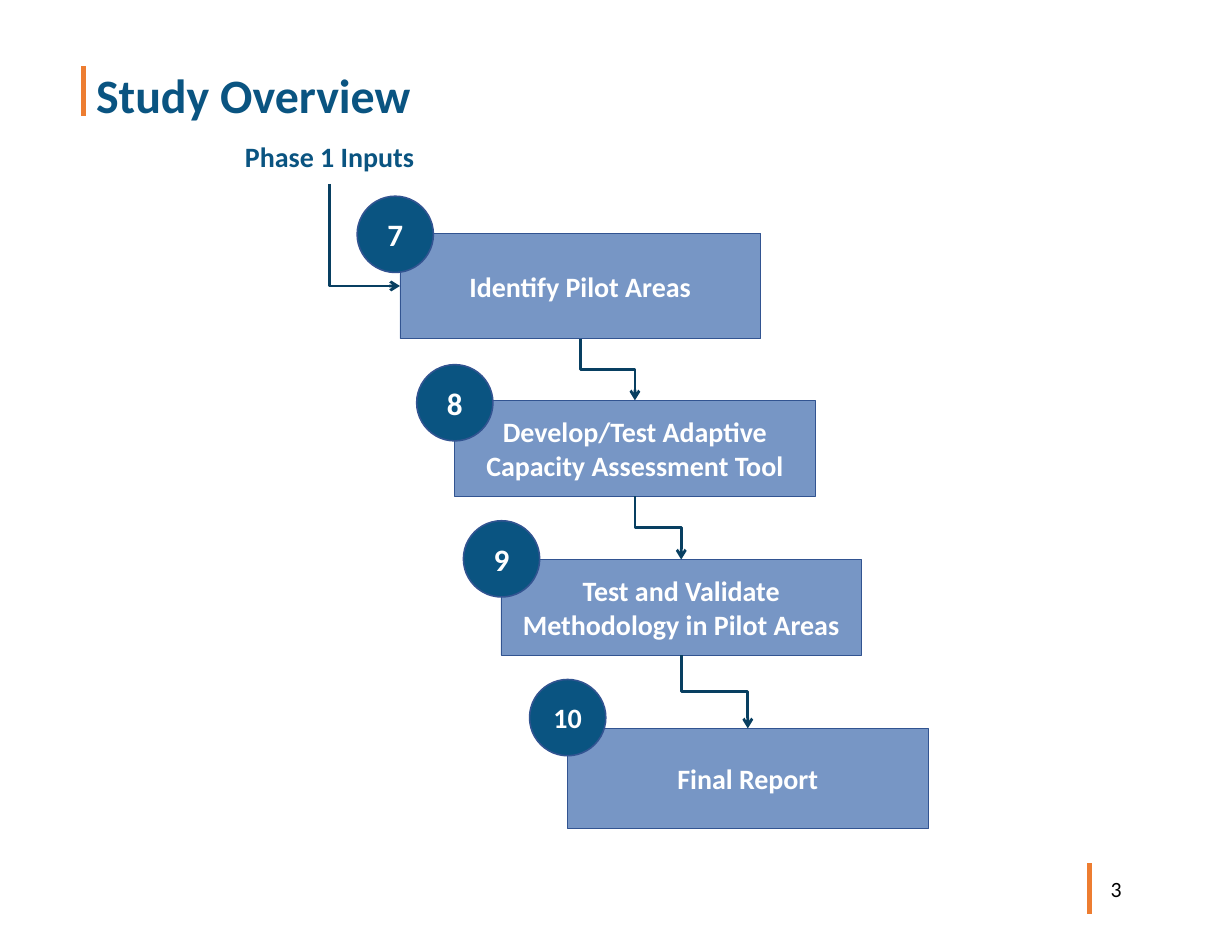
"""Build the Study Overview slide: a staircase of numbered study steps."""
from dataclasses import dataclass
from itertools import pairwise

from lxml.etree import SubElement
from pptx import Presentation
from pptx.dml.color import RGBColor
from pptx.enum.shapes import MSO_CONNECTOR as Connector, MSO_SHAPE as Preset
from pptx.enum.text import MSO_ANCHOR as Anchor, PP_ALIGN as Align
from pptx.oxml.ns import qn
from pptx.shapes.autoshape import Shape
from pptx.shapes.connector import Connector as ConnectorShape
from pptx.slide import Slide
from pptx.util import Cm, Pt

COLORS = {
    "accent": "ED7D31",
    "navy": "0A5481",
    "arrow": "083F61",
    "box": "7796C5",
    "outline": "325491",
    "white": "FFFFFF",
    "black": "000000",
}
FONT = "Calibri"
BOX_WIDTH = 8.18
BADGE_SIZE = 1.73
BAR_HEIGHT = 1.14
BOTTOM, LEFT, TOP = 2, 1, 0


@dataclass(frozen=True)
class Step:
    number: int
    label: str
    left: float
    top: float
    height: float
    badge_left: float
    badge_top: float
    badge_font: float = 20


STEPS = [
    Step(7, "Identify Pilot Areas", 9.07, 5.29, 2.39, 8.1, 4.45),
    Step(8, "Develop/Test Adaptive\vCapacity Assessment Tool", 10.31, 9.08, 2.17, 9.45, 8.27),
    Step(9, "Test and Validate Methodology in Pilot Areas", 11.36, 12.69, 2.17, 10.51, 11.81),
    Step(10, "Final Report", 12.87, 16.52, 2.27, 12.01, 15.41, 18),
]


def color(name: str) -> RGBColor:
    """Return the named palette colour."""
    return RGBColor.from_string(COLORS[name])


def write(shape: Shape, text: str, size: float, font_color: str, bold: bool = True,
          align: Align = Align.CENTER, anchor: Anchor = Anchor.MIDDLE) -> None:
    """Fill a shape with one formatted paragraph."""
    frame = shape.text_frame
    frame.word_wrap = True
    frame.vertical_anchor = anchor
    paragraph = frame.paragraphs[0]
    paragraph.text = text
    paragraph.alignment = align
    for run in paragraph.runs:
        run.font.name = FONT
        run.font.size = Pt(size)
        run.font.bold = bold
        run.font.color.rgb = color(font_color)


def narrow_margins(shape: Shape) -> None:
    """Give a shape the small side margins of the diagram."""
    shape.text_frame.margin_left = shape.text_frame.margin_right = Cm(0.1)


def add_text(slide: Slide, left: float, top: float, width: float, height: float) -> Shape:
    """Add an empty text box measured in centimetres."""
    return slide.shapes.add_textbox(Cm(left), Cm(top), Cm(width), Cm(height))


def add_filled(slide: Slide, preset: Preset, left: float, top: float, width: float,
               height: float, fill: str, line_width: float) -> Shape:
    """Add a flat outlined shape."""
    shape = slide.shapes.add_shape(preset, Cm(left), Cm(top), Cm(width), Cm(height))
    shape.shadow.inherit = False
    shape.fill.solid()
    shape.fill.fore_color.rgb = color(fill)
    shape.line.color.rgb = color("outline")
    shape.line.width = Pt(line_width)
    return shape


def style_line(connector: ConnectorShape, line_color: str, width: float) -> None:
    """Colour a connector and remove its shadow."""
    connector.line.color.rgb = color(line_color)
    connector.line.width = Pt(width)
    SubElement(connector.element.spPr, qn("a:effectLst"))


def add_bar(slide: Slide, left: float, top: float) -> None:
    """Add a vertical accent bar."""
    bar = slide.shapes.add_connector(
        Connector.STRAIGHT, Cm(left), Cm(top), Cm(left), Cm(top + BAR_HEIGHT))
    style_line(bar, "accent", 3)


def add_arrow(slide: Slide, source: Shape, target: Shape, side: int) -> None:
    """Add an elbow arrow that leaves the source downwards and meets a target side."""
    start_x, start_y = source.left + source.width // 2, source.top + source.height
    if side == TOP:
        end_x, end_y = target.left + target.width // 2, target.top
    else:
        end_x, end_y = target.left, target.top + target.height // 2
    arrow = slide.shapes.add_connector(Connector.ELBOW, start_x, start_y, end_x, end_y)
    arrow.begin_connect(source, BOTTOM)
    arrow.end_connect(target, side)
    arrow.width, arrow.height = end_y - start_y, end_x - start_x
    arrow.left = (start_x + end_x - arrow.width) // 2
    arrow.top = (start_y + end_y - arrow.height) // 2
    properties = arrow.element.spPr
    transform = properties.find(qn("a:xfrm"))
    transform.set("rot", "16200000")
    transform.set("flipH", "1")
    if side == LEFT:
        properties.find(qn("a:prstGeom")).set("prst", "bentConnector2")
    style_line(arrow, "arrow", 1.75)
    SubElement(properties.find(qn("a:ln")), qn("a:tailEnd"), type="arrow")


def add_box(slide: Slide, step: Step) -> Shape:
    """Add the labelled rectangle of a step."""
    box = add_filled(slide, Preset.RECTANGLE, step.left, step.top, BOX_WIDTH,
                     step.height, "box", 0.25)
    narrow_margins(box)
    write(box, step.label, 18, "white")
    return box


def add_badge(slide: Slide, step: Step) -> None:
    """Add the numbered circle of a step."""
    badge = add_filled(slide, Preset.OVAL, step.badge_left, step.badge_top,
                       BADGE_SIZE, BADGE_SIZE, "navy", 1)
    write(badge, str(step.number), step.badge_font, "white")


def main() -> None:
    """Build and save the presentation."""
    presentation = Presentation()
    presentation.slide_width, presentation.slide_height = Cm(27.94), Cm(21.59)
    slide = presentation.slides.add_slide(presentation.slide_layouts[6])

    add_bar(slide, 24.71, 19.58)
    add_bar(slide, 1.9, 1.5)
    write(add_text(slide, 24.94, 19.58, 1.78, 1.14), "3", 14, "black",
          bold=False, align=Align.LEFT)
    title = add_text(slide, 1.93, 1.52, 24.1, 2.64)
    write(title, "Study Overview", 30.8, "navy", align=Align.LEFT, anchor=Anchor.TOP)
    title.text_frame.paragraphs[0].line_spacing = 0.9

    boxes = [add_box(slide, step) for step in STEPS]
    for source, target in pairwise(boxes):
        add_arrow(slide, source, target, TOP)
    for step in STEPS:
        add_badge(slide, step)

    inputs = add_text(slide, 5.1, 2.92, 4.75, 1.25)
    narrow_margins(inputs)
    write(inputs, "Phase 1 Inputs", 18, "navy")
    add_arrow(slide, inputs, boxes[0], LEFT)

    presentation.save("out.pptx")


if __name__ == "__main__":
    main()
